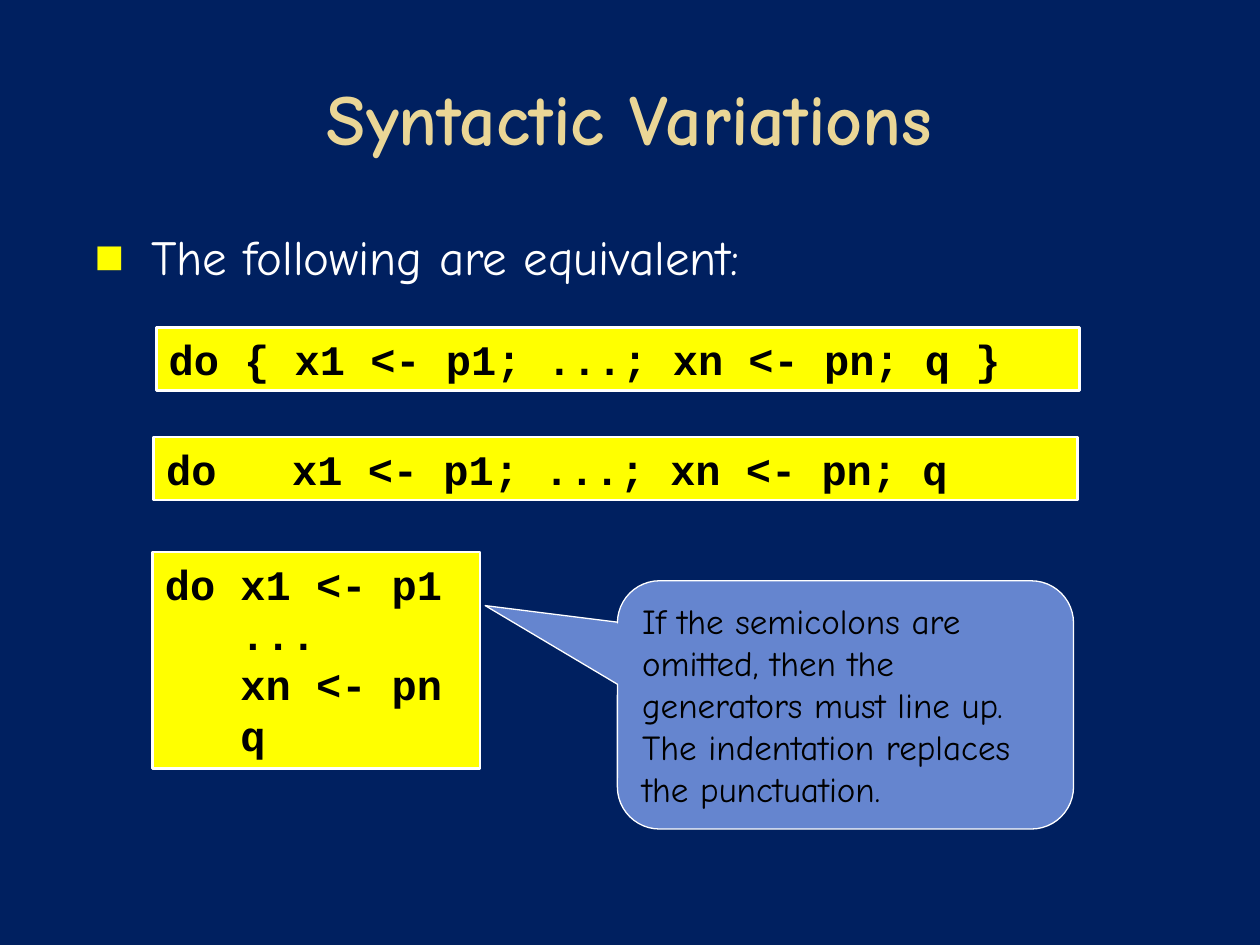
"""Builds a slide on the equivalent ways of writing a do expression."""
from lxml.etree import SubElement
from pptx import Presentation
from pptx.dml.color import RGBColor
from pptx.enum.shapes import MSO_SHAPE as Shape
from pptx.enum.text import MSO_ANCHOR as Anchor, PP_ALIGN as Align
from pptx.oxml.ns import qn
from pptx.util import Inches, Pt

NAVY = RGBColor(0x00, 0x20, 0x60)
GOLD = RGBColor(0xEA, 0xD6, 0x96)
YELLOW = RGBColor(0xFF, 0xFF, 0x00)
BLUE = RGBColor(0x65, 0x85, 0xCF)
WHITE = RGBColor(0xFF, 0xFF, 0xFF)
BLACK = RGBColor(0x00, 0x00, 0x00)
PROSE, CODE = "Comic Neue", "Courier New"

TITLE = "Syntactic Variations"
INTRO = "The following are equivalent:"
VARIANTS = [
    ("do { x1 <- p1; ...; xn <- pn; q }", (1.24, 2.6, 7.33, 0.5)),
    ("do   x1 <- p1; ...; xn <- pn; q", (1.22, 3.47, 7.33, 0.5)),
    ("do x1 <- p1\n   ...\n   xn <- pn\n   q", (1.21, 4.38, 2.6, 1.72)),
]
REMARK = ("If the semicolons are omitted, then the generators must line up.  "
          "The indentation replaces the punctuation.")
REMARK_BOX = (4.9, 4.61, 3.62, 1.97)
REMARK_POINTER = (-0.79, -0.4, 0.17)


def place(shape, box):
    shape.left, shape.top, shape.width, shape.height = map(Inches, box)


def write(shape, text, font, size, color, bold=False, align=Align.LEFT, anchor=Anchor.TOP):
    frame = shape.text_frame
    frame.text = text
    frame.word_wrap = True
    frame.vertical_anchor = anchor
    for paragraph in frame.paragraphs:
        paragraph.alignment = align
        for run in paragraph.runs:
            run.font.name, run.font.size, run.font.bold = font, Pt(size), bold
            run.font.color.rgb = color


def hang(paragraph, indent, first):
    properties = paragraph._p.get_or_add_pPr()
    properties.set("marL", str(Inches(indent)))
    properties.set("indent", str(Inches(first)))
    return properties


def add_panel(slide, kind, box, fill, line_width):
    panel = slide.shapes.add_shape(kind, *map(Inches, box))
    panel.shadow.inherit = False
    panel.fill.solid()
    panel.fill.fore_color.rgb = fill
    panel.line.color.rgb = WHITE
    panel.line.width = Pt(line_width)
    return panel


def main():
    deck = Presentation()
    deck.slide_width, deck.slide_height = Inches(10), Inches(7.5)
    slide = deck.slides.add_slide(deck.slide_layouts[1])
    slide.background.fill.solid()
    slide.background.fill.fore_color.rgb = NAVY

    title, intro = slide.placeholders
    place(title, (0.5, 0.3, 9, 1.25))
    write(title, TITLE, PROSE, 41, GOLD, True, Align.CENTER, Anchor.MIDDLE)

    place(intro, (0.5, 1.75, 9, 5.15))
    write(intro, INTRO, PROSE, 28, WHITE)
    point = intro.text_frame.paragraphs[0]
    point.space_before = Pt(18)
    bullet = hang(point, 0.6, -0.45)
    SubElement(SubElement(bullet, qn("a:buClr")), qn("a:srgbClr"), val=str(YELLOW))
    SubElement(bullet, qn("a:buChar"), char="■")

    for code, box in VARIANTS:
        panel = add_panel(slide, Shape.RECTANGLE, box, YELLOW, 1.5)
        write(panel, code, CODE, 24, BLACK, True)
        for line in panel.text_frame.paragraphs:
            hang(line, 0.32, -0.32)

    remark = add_panel(slide, Shape.ROUNDED_RECTANGULAR_CALLOUT, REMARK_BOX, BLUE, 0.75)
    for index, value in enumerate(REMARK_POINTER):
        remark.adjustments[index] = value
    write(remark, REMARK, PROSE, 20, BLACK)

    deck.save("out.pptx")


if __name__ == "__main__":
    main()
